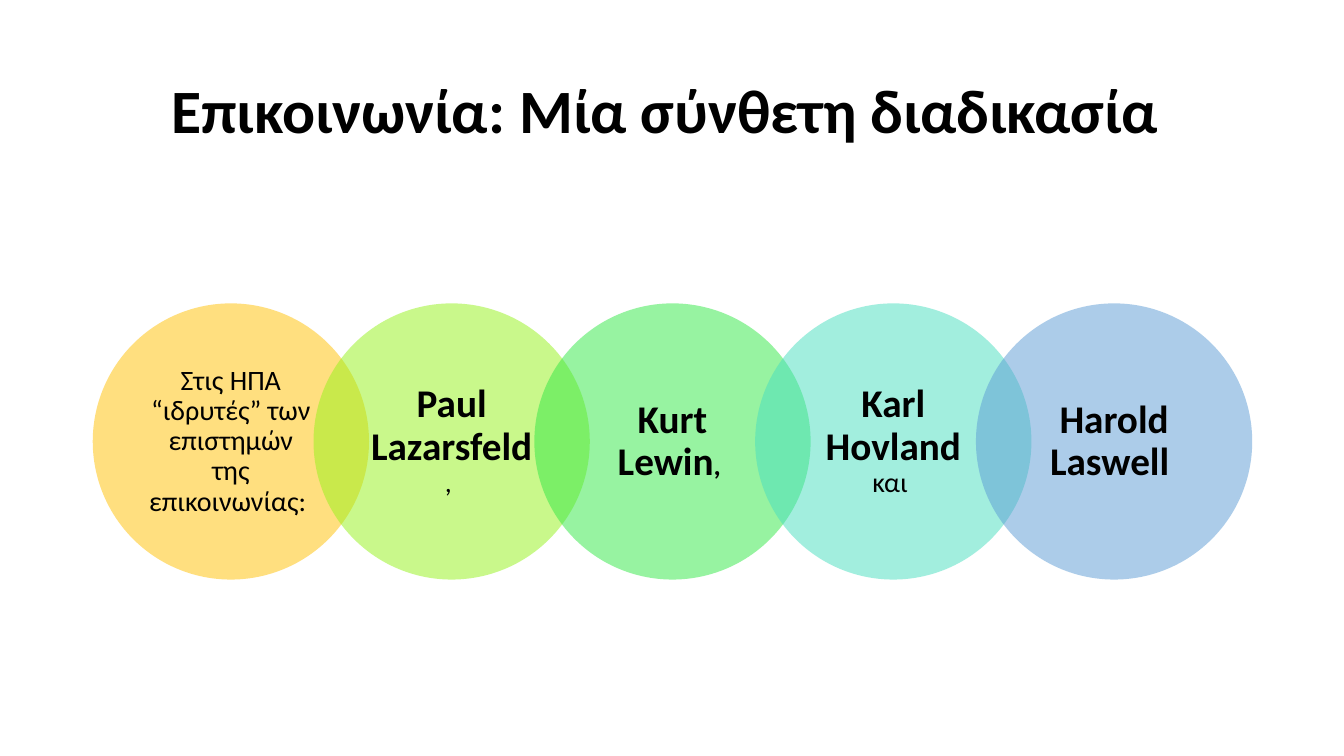
from pptx import Presentation
from pptx.dml.color import RGBColor as RGB
from pptx.enum.shapes import MSO_SHAPE as Shape
from pptx.enum.text import MSO_ANCHOR as Anchor, PP_ALIGN as Align
from pptx.oxml.ns import qn
from pptx.util import Inches, Pt
from lxml.etree import SubElement

HUES = {
    "ink": "000000",
    "gold": "FFC000",
    "lime": "94F319",
    "green": "30E845",
    "teal": "46DEBF",
    "blue": "5B9BD5",
}
LEFT, TOP, SIZE, STEP = 0.92, 3.01, 2.74, 2.19
RINGS = [
    ("gold", [("Στις ΗΠΑ “ιδρυτές” των επιστημών της επικοινωνίας: ", 20, False)]),
    ("lime", [("Paul Lazarsfeld", 28, True), (", ", 20, False)]),
    ("green", [("Kurt Lewin", 28, True), (", ", 20, True)]),
    ("teal", [("Karl Hovland", 28, True), (" και ", 20, False)]),
    ("blue", [("Harold Laswell ", 28, True)]),
]


class Deck:
    font = "Calibri"

    def __init__(self):
        self.show = Presentation()
        self.show.slide_width = Inches(13.33)
        self.show.slide_height = Inches(7.5)
        self.page = self.show.slides.add_slide(self.show.slide_layouts[6])

    def label(self, frame, runs, side, edge):
        frame.word_wrap = True
        frame.vertical_anchor = Anchor.MIDDLE
        frame.margin_left = frame.margin_right = Inches(side)
        frame.margin_top = frame.margin_bottom = Inches(edge)
        para = frame.paragraphs[0]
        para.alignment = Align.CENTER
        para.line_spacing = 0.9
        for text, size, bold in runs:
            run = para.add_run()
            run.text = text
            run.font.name = self.font
            run.font.size = Pt(size)
            run.font.bold = bold
            run.font.color.rgb = RGB.from_string(HUES["ink"])

    def title(self, text, x, y, w, h):
        box = self.page.shapes.add_textbox(Inches(x), Inches(y), Inches(w), Inches(h))
        self.label(box.text_frame, [(text, 44, True)], 0.1, 0.05)

    def ring(self, x, y, size, hue, runs):
        disc = self.page.shapes.add_shape(
            Shape.OVAL, Inches(x), Inches(y), Inches(size), Inches(size))
        disc.shadow.inherit = False
        disc.line.fill.background()
        disc.fill.solid()
        disc.fill.fore_color.rgb = RGB.from_string(HUES[hue])
        tint = disc.element.spPr.find(qn("a:solidFill"))[0]
        SubElement(tint, qn("a:alpha")).set("val", "50000")
        self.label(disc.text_frame, runs, 0.15, 0.04)


def main():
    deck = Deck()
    deck.title("Επικοινωνία: Μία σύνθετη διαδικασία ", LEFT, 0.4, 11.5, 1.45)
    for i, (hue, runs) in enumerate(RINGS):
        deck.ring(LEFT + i * STEP, TOP, SIZE, hue, runs)
    deck.show.save("out.pptx")


if __name__ == "__main__":
    main()
